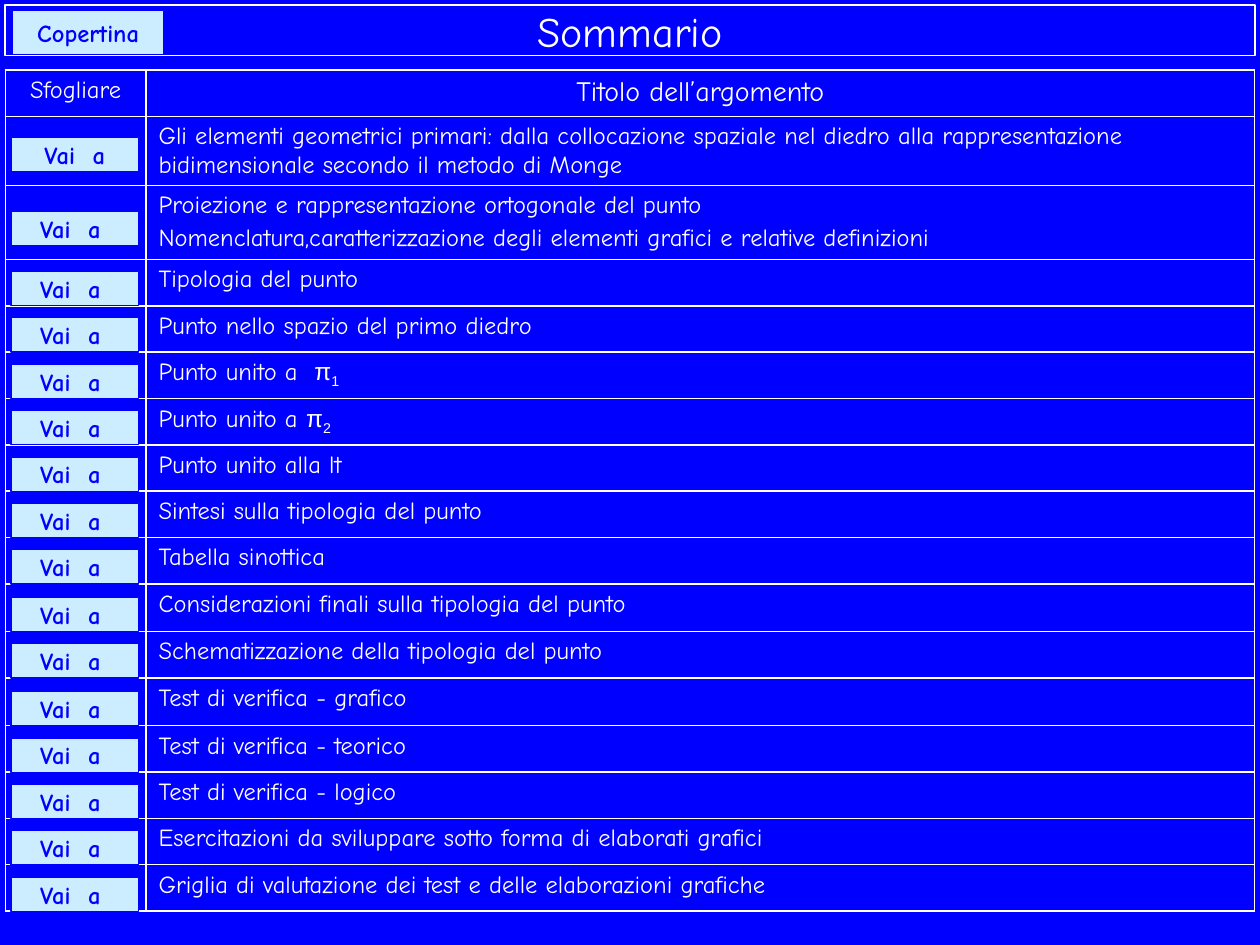
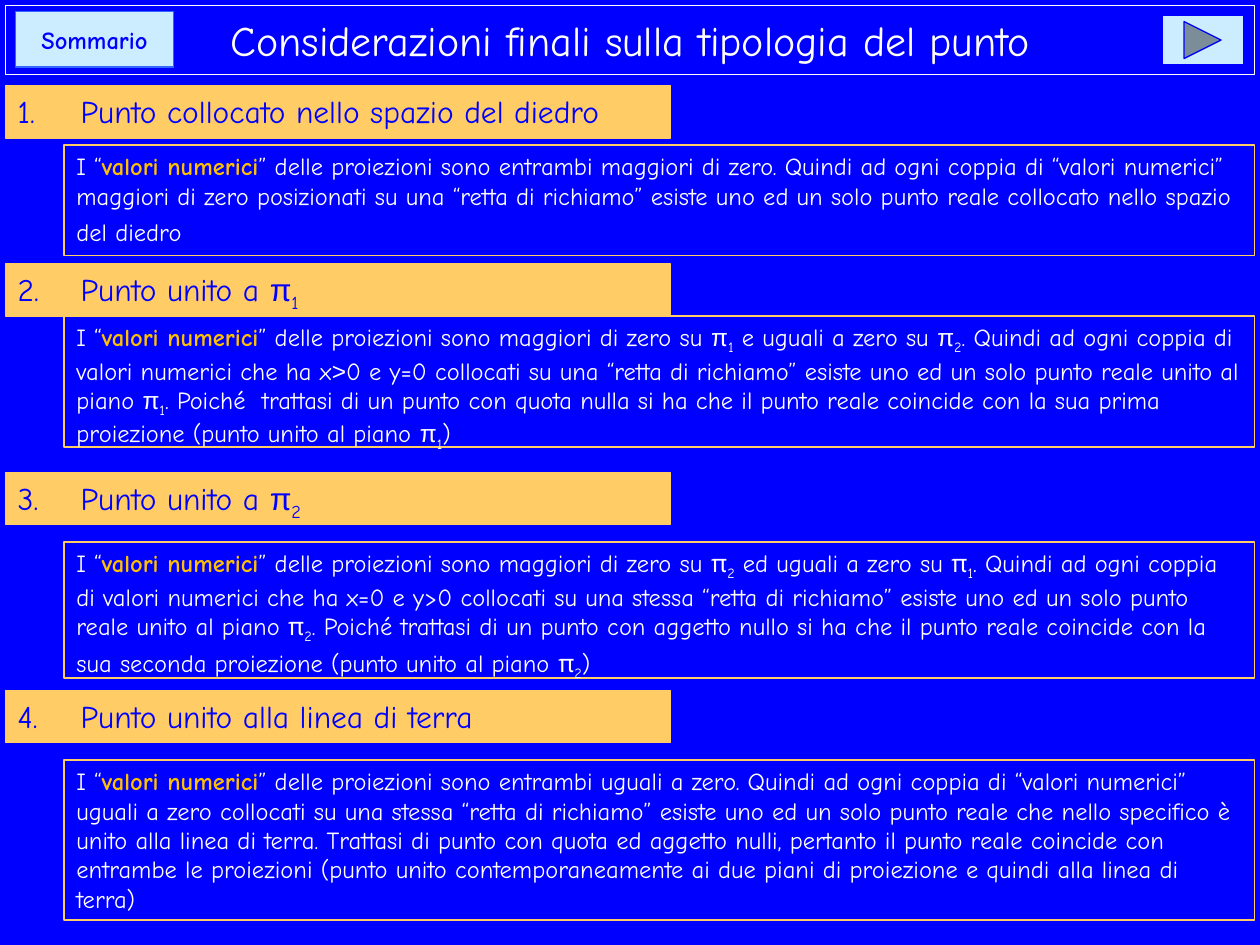
from lxml import etree
from pptx import Presentation
from pptx.dml.color import RGBColor
from pptx.enum.shapes import MSO_SHAPE
from pptx.enum.text import MSO_ANCHOR, PP_ALIGN
from pptx.oxml.ns import qn
from pptx.util import Pt

RECTANGLE = MSO_SHAPE.RECTANGLE
BLANK_BUTTON = MSO_SHAPE.ACTION_BUTTON_CUSTOM
NEXT_BUTTON = MSO_SHAPE.ACTION_BUTTON_FORWARD_OR_NEXT
TOP, MIDDLE = MSO_ANCHOR.TOP, MSO_ANCHOR.MIDDLE
LEFT, CENTER = PP_ALIGN.LEFT, PP_ALIGN.CENTER

COLORS = {
    "blue": "0000FF",
    "white": "FFFFFF",
    "ice": "CCECFF",
    "sand": "FFCC66",
    "amber": "FFC000",
    "royal": "3366FF",
}
FONT, SYMBOL_FONT = "Comic Neue", "Arial"
MARGIN, FULL_WIDTH = 3, 714
KEY_TERM = ("valori numerici", {"color": "amber", "bold": True})


def plane(number, symbol_font=SYMBOL_FONT, number_font=FONT):
    return [("π", {"font": symbol_font}),
            (number, {"font": number_font, "subscript": True})]


class Deck:
    def __init__(self):
        self.presentation = Presentation()
        self.presentation.slide_width = Pt(720)
        self.presentation.slide_height = Pt(540)
        self.slide = None

    def color(self, name):
        return RGBColor.from_string(COLORS[name])

    def add_slide(self):
        self.slide = self.presentation.slides.add_slide(self.presentation.slide_layouts[6])
        fill = self.slide.background.fill
        fill.solid()
        fill.fore_color.rgb = self.color("blue")

    def add_runs(self, paragraph, runs, size=14, color="white", bold=False, align=LEFT):
        paragraph.alignment = align
        for item in runs:
            text, style = (item, {}) if isinstance(item, str) else item
            run = paragraph.add_run()
            run.text = text
            font = run.font
            font.name = style.get("font", FONT)
            font.size = Pt(style.get("size", size))
            font.bold = style.get("bold", bold)
            font.color.rgb = self.color(style.get("color", color))
            if style.get("subscript"):
                run._r.get_or_add_rPr().set("baseline", "-25000")

    def shape(self, kind, box, fill=None, line="white", line_width=0.75, anchor=TOP):
        shape = self.slide.shapes.add_shape(kind, *map(Pt, box))
        shape.shadow.inherit = False
        if fill:
            shape.fill.solid()
            shape.fill.fore_color.rgb = self.color(fill)
        else:
            shape.fill.background()
        shape.line.color.rgb = self.color(line)
        shape.line.width = Pt(line_width)
        shape.text_frame.word_wrap = True
        shape.text_frame.vertical_anchor = anchor
        return shape

    def title(self, text, height, line_width):
        shape = self.shape(RECTANGLE, (MARGIN, MARGIN, FULL_WIDTH, height),
                           line_width=line_width, anchor=MIDDLE)
        self.add_runs(shape.text_frame.paragraphs[0], [text], size=24, align=CENTER)

    def button(self, box, text="", kind=BLANK_BUTTON, line="blue"):
        shape = self.shape(kind, box, "ice", line, 0, MIDDLE)
        if text:
            self.add_runs(shape.text_frame.paragraphs[0], [text],
                          color="blue", bold=True, align=CENTER)

    def heading(self, number, top, runs):
        shape = self.shape(RECTANGLE, (MARGIN, top, 380, 29.8), "sand", "sand")
        paragraph = shape.text_frame.paragraphs[0]
        self.add_runs(paragraph, runs, size=18, color="blue")
        properties = paragraph._p.get_or_add_pPr()
        properties.set("marL", str(Pt(36)))
        properties.set("indent", str(Pt(-36)))
        etree.SubElement(properties, qn("a:buFont"), typeface=FONT)
        etree.SubElement(properties, qn("a:buAutoNum"),
                         type="arabicPeriod", startAt=str(number))

    def explanation(self, top, height, runs):
        shape = self.shape(RECTANGLE, (36.6, top, 680.4, height), line="sand")
        self.add_runs(shape.text_frame.paragraphs[0], ["I “", KEY_TERM, *runs])

    def cell(self, cell, paragraphs, size=14, align=LEFT):
        cell.fill.background()
        frame = cell.text_frame
        for index, runs in enumerate(paragraphs):
            paragraph = frame.add_paragraph() if index else frame.paragraphs[0]
            paragraph.space_before = Pt(0.2 * size)
            self.add_runs(paragraph, runs, size, align=align)
        if not paragraphs:
            etree.SubElement(frame.paragraphs[0]._p, qn("a:endParaRPr"), sz="1400")
        properties = cell._tc.get_or_add_tcPr()
        for index, side in enumerate(("lnL", "lnR", "lnT", "lnB")):
            border = etree.Element(qn(f"a:{side}"), w=str(Pt(1)))
            fill = etree.SubElement(border, qn("a:solidFill"))
            etree.SubElement(fill, qn("a:srgbClr"), val=COLORS["white"])
            properties.insert(index, border)

    def table(self, top, widths, heights):
        frame = self.slide.shapes.add_table(
            len(heights), len(widths), Pt(MARGIN), Pt(top), Pt(sum(widths)), Pt(sum(heights)))
        table = frame.table
        table.first_row = table.horz_banding = False
        for column, width in zip(table.columns, widths):
            column.width = Pt(width)
        for row, height in zip(table.rows, heights):
            row.height = Pt(height)
        return table


TOPICS = [
    [["Gli elementi geometrici primari: dalla collocazione spaziale nel diedro alla "
      "rappresentazione bidimensionale secondo il metodo di Monge"]],
    [["Proiezione e rappresentazione ortogonale del punto"],
     ["Nomenclatura,caratterizzazione degli elementi grafici e relative definizioni"]],
    [["Tipologia del punto"]],
    [["Punto nello spazio del primo diedro"]],
    [["Punto unito a  ", *plane("1", number_font=SYMBOL_FONT)]],
    [["Punto unito a ", *plane("2", number_font=SYMBOL_FONT)]],
    [["Punto unito alla lt"]],
    [["Sintesi sulla tipologia del punto"]],
    [["Tabella sinottica"]],
    [["Considerazioni finali sulla tipologia del punto"]],
    [["Schematizzazione della tipologia del punto"]],
    [["Test di verifica - grafico"]],
    [["Test di verifica - teorico"]],
    [["Test di verifica - logico"]],
    [["Esercitazioni da sviluppare sotto forma di elaborati grafici"]],
    [["Griglia di valutazione dei test e delle elaborazioni grafiche"]],
]

CASES = [
    (49, ["Punto collocato nello spazio del diedro"], 82.8, 63.4, [
        "” delle proiezioni sono entrambi maggiori di zero. Quindi ad ogni coppia di “valori "
        "numerici” maggiori di zero posizionati su una “retta di richiamo” esiste uno ed un "
        "solo punto reale collocato nello spazio del diedro",
        (" ", {"size": 18})]),
    (150.8, ["Punto unito a ", *plane("1")], 180.6, 74.9, [
        "” delle proiezioni sono maggiori di zero su ", *plane("1"),
        " e uguali a zero su ", *plane("2"),
        ". Quindi ad ogni coppia di valori numerici che ha x", (">", {"font": SYMBOL_FONT}),
        "0 e y=0 collocati su una “retta di richiamo” esiste uno ed un solo punto reale "
        "unito al piano ", *plane("1"),
        ". Poiché  trattasi di un punto con quota nulla si ha che il punto reale coincide "
        "con la sua prima proiezione (punto unito al piano ", *plane("1"), ")"]),
    (270, ["Punto unito a ", *plane("2")], 309.8, 77.6, [
        "” delle proiezioni sono maggiori di zero su ", *plane("2", FONT),
        " ed uguali a zero su ", *plane("1", FONT),
        ". Quindi ad ogni coppia di valori numerici che ha x=0 e y>0 collocati su una stessa "
        "“retta di richiamo” esiste uno ed un solo punto reale unito al piano ",
        *plane("2", FONT),
        ". Poiché trattasi di un punto con aggetto nullo si ha che il punto reale coincide "
        "con la sua seconda proiezione (punto unito al piano ", *plane("2", FONT), ")",
        (" ", {"size": 16})]),
    (394.6, ["Punto unito alla linea di terra"], 434.3, 91.5, [
        "” delle proiezioni sono entrambi uguali a zero. Quindi ad ogni coppia di “valori "
        "numerici” uguali a zero collocati su una stessa “retta di richiamo” esiste uno ed "
        "un solo punto reale che nello specifico è unito alla linea di terra. Trattasi di "
        "punto con quota ed aggetto nulli, pertanto il punto reale coincide con entrambe le "
        "proiezioni (punto unito contemporaneamente ai due piani di proiezione e quindi alla "
        "linea di terra)"]),
]


def build_summary(deck):
    table_top, button_height = 40, 19.6
    heights = [26.6, 39.4, 42.2] + [26.5] * 14
    heights[10] = heights[12] = 27.3
    deck.add_slide()
    deck.title("Sommario", 28.8, 1)
    table = deck.table(table_top, [80.4, 633.6], heights)
    deck.cell(table.cell(0, 0), [["Sfogliare"]], align=CENTER)
    deck.cell(table.cell(0, 1), [["Titolo dell’argomento"]], 16, CENTER)
    deck.button((7.2, 6, 86.4, 25), "Copertina")
    for row, topic in enumerate(TOPICS, 1):
        deck.cell(table.cell(row, 0), [])
        deck.cell(table.cell(row, 1), topic)
        lift = 8 if row <= 2 else 0
        bottom = table_top + sum(heights[:row + 1]) - lift
        label = "Vai  a" if row == 1 else "Vai  a "
        deck.button((6.2, bottom - button_height, 73, button_height), label)


def build_conclusions(deck):
    deck.add_slide()
    deck.title("Considerazioni finali sulla tipologia del punto", 39.6, 0.75)
    for number, (heading_top, heading, top, height, runs) in enumerate(CASES, 1):
        deck.heading(number, heading_top, heading)
        deck.explanation(top, height, runs)
    deck.button((9, 6.6, 90, 31.6), "Sommario", line="royal")
    deck.button((664, 8.8, 46.4, 28.2), kind=NEXT_BUTTON)


def main():
    deck = Deck()
    build_summary(deck)
    build_conclusions(deck)
    deck.presentation.save("out.pptx")


if __name__ == "__main__":
    main()
